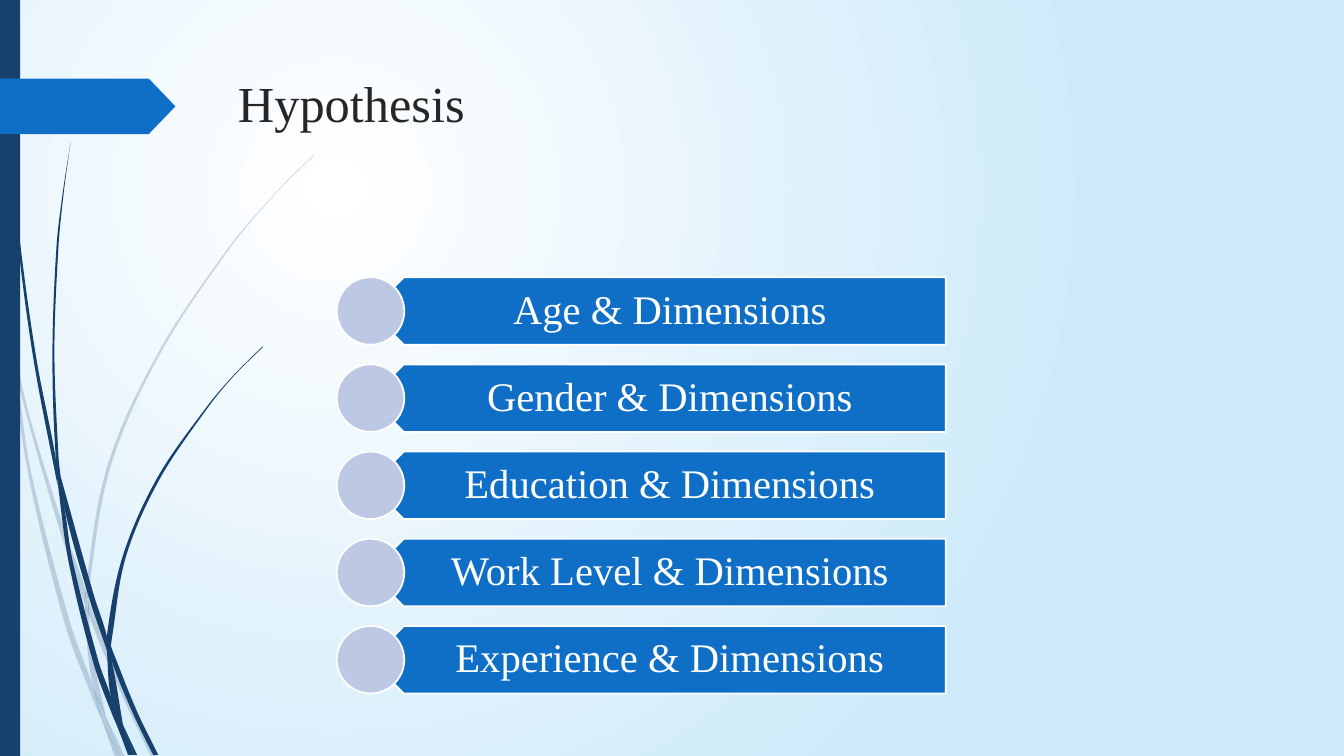
from dataclasses import dataclass

from lxml.etree import SubElement
from pptx import Presentation
from pptx.dml.color import RGBColor
from pptx.enum.shapes import MSO_SHAPE
from pptx.enum.text import MSO_ANCHOR, PP_ALIGN
from pptx.oxml.ns import qn
from pptx.util import Inches, Pt

TITLE = "Hypothesis"
HYPOTHESES = ["Age", "Gender", "Education", "Work Level", "Experience"]
ROW_TEXT = "{} & Dimensions"

# Each piece of grass: knots of its left edge, then of its right edge, downwards
PALE_GRASS = [
    ([(0, 2.99), (0.1, 3.44), (0.11, 3.5)], [(0, 2.82), (0.09, 3.22), (0.11, 3.5)]),
    ([(0.14, 3.45), (0.17, 3.76), (0.58, 5.22), (0.84, 5.99)],
     [(0.14, 3.45), (0.29, 4.12), (0.62, 5.2), (0.85, 5.86), (0.84, 5.99)]),
    ([(0.88, 5.96), (0.88, 6.1), (1.23, 6.94), (1.5, 7.51)],
     [(0.88, 5.96), (0.92, 6.07), (1.27, 6.92), (1.55, 7.51)]),
    ([(1.05, 7.11), (1.19, 7.51)], [(1.05, 7.11), (1.24, 7.51)]),
    ([(0.11, 3.5), (0.28, 4.7), (0.65, 6.21), (0.92, 6.93), (1.01, 7.14)],
     [(0.11, 3.5), (0.17, 3.76), (0.31, 4.69), (0.7, 6.19), (0.93, 6.83), (1.01, 7.14)]),
    ([(0.84, 5.99), (0.87, 6.46), (0.93, 6.83), (1.05, 7.11)],
     [(0.84, 5.99), (0.88, 6.1), (0.91, 6.46), (1.05, 7.11)]),
    ([(3.12, 1.53), (2.89, 1.75), (2.68, 1.97), (2.28, 2.44), (1.58, 3.48),
      (1.07, 4.61), (0.85, 5.84), (0.88, 5.96)],
     [(3.12, 1.54), (2.9, 1.75), (2.68, 1.98), (2.29, 2.45), (1.6, 3.49),
      (1.1, 4.62), (0.88, 5.84), (0.88, 5.96)]),
    ([(1.01, 7.14), (1.14, 7.51)], [(1.01, 7.14), (1.19, 7.51)]),
    ([(0.85, 5.86), (0.84, 5.99), (0.88, 6.1)], [(0.85, 5.86), (0.88, 5.96), (0.88, 6.1)]),
    ([(0.93, 6.83), (1.01, 7.14), (1.19, 7.51)], [(0.93, 6.83), (1.05, 7.11), (1.19, 7.51)]),
]
DARK_GRASS = [
    ([(0.03, 0), (0.07, 1.1), (0.17, 2.33), (0.33, 3.55), (0.57, 4.81)],
     [(0.04, 0), (0.08, 1.09), (0.19, 2.32), (0.36, 3.55), (0.55, 4.53), (0.57, 4.81)]),
    ([(0.6, 4.72), (0.64, 5.05), (0.88, 5.92), (1.06, 6.45)],
     [(0.6, 4.72), (0.93, 5.9), (1.06, 6.31), (1.06, 6.45)]),
    ([(1.1, 6.41), (1.11, 6.56), (1.32, 7.08), (1.52, 7.49)],
     [(1.1, 6.41), (1.13, 6.49), (1.36, 7.06), (1.57, 7.49)]),
    ([(0.57, 4.77), (0.68, 5.57), (0.93, 6.59), (1.11, 7.08), (1.17, 7.22)],
     [(0.57, 4.77), (0.64, 5.05), (0.72, 5.56), (0.98, 6.57), (1.1, 6.91), (1.17, 7.22)]),
    ([(0.7, 1.41), (0.62, 1.93), (0.56, 2.45), (0.52, 3.49), (0.55, 4.49), (0.6, 4.72)],
     [(0.7, 1.41), (0.63, 1.93), (0.58, 2.45), (0.54, 3.49), (0.58, 4.53), (0.6, 4.72)]),
    ([(1.22, 7.19), (1.33, 7.49)], [(1.22, 7.19), (1.36, 7.49)]),
    ([(0.55, 4.49), (0.57, 4.77), (0.64, 5.05)], [(0.55, 4.49), (0.6, 4.72), (0.64, 5.05)]),
    ([(2.6, 3.44), (2.31, 3.73), (2.04, 4.05), (1.56, 4.74), (1.22, 5.51),
      (1.06, 6.31), (1.1, 6.41)],
     [(2.61, 3.44), (2.31, 3.74), (2.05, 4.06), (1.58, 4.76), (1.25, 5.52),
      (1.11, 6.33), (1.1, 6.41)]),
    ([(1.17, 7.22), (1.27, 7.49)], [(1.17, 7.22), (1.31, 7.49)]),
    ([(1.06, 6.45), (1.1, 6.91), (1.22, 7.19)], [(1.06, 6.45), (1.11, 6.56), (1.22, 7.19)]),
    ([(1.06, 6.31), (1.06, 6.45), (1.11, 6.56)], [(1.06, 6.31), (1.1, 6.41), (1.11, 6.56)]),
    ([(1.1, 6.91), (1.17, 7.22), (1.3, 7.49)], [(1.1, 6.91), (1.22, 7.19), (1.33, 7.49)]),
]


@dataclass(frozen=True)
class Theme:
    navy: str = "17406D"
    blue: str = "0F6FC6"
    lilac: str = "BDC8E5"
    white: str = "FFFFFF"
    sky: str = "CEEAF9"
    ink: str = "262626"
    font: str = "Times New Roman"
    title_size: int = 36
    row_size: int = 29
    outline: float = 1.25
    pale_alpha: int = 20


THEME = Theme()
ROW_TOP, ROW_PITCH, ROW_HEIGHT = 2.75, 0.865, 0.67
DOT_LEFT, BAR_LEFT, BAR_WIDTH = 3.34, 3.67, 5.71
LABEL_LEFT, LABEL_WIDTH = 3.84, 5.55


def rgb(color):
    return RGBColor.from_string(color)


def paint(sp, fill, line=None):
    sp.shadow.inherit = False
    sp.fill.solid()
    sp.fill.fore_color.rgb = rgb(fill)
    if line:
        sp.line.color.rgb = rgb(line)
        sp.line.width = Pt(THEME.outline)
    else:
        sp.line.fill.background()


def add_preset(slide, kind, box, fill, line=None):
    sp = slide.shapes.add_shape(kind, *map(Inches, box))
    paint(sp, fill, line)
    return sp


def write(tf, text, size, color, align):
    p = tf.paragraphs[0]
    p.alignment = align
    r = p.add_run()
    r.text = text
    r.font.name = THEME.font
    r.font.size = Pt(size)
    r.font.color.rgb = rgb(color)
    return p


def curve_through(knots):
    """Return (control, control, end) triples of a smooth curve through the knots."""
    last = len(knots) - 1
    slopes = []
    for i in range(len(knots)):
        (x0, y0), (x1, y1) = knots[max(i - 1, 0)], knots[min(i + 1, last)]
        slopes.append((x1 - x0) / (y1 - y0))
    curves = []
    for i in range(last):
        (x0, y0), (x1, y1) = knots[i], knots[i + 1]
        h = (y1 - y0) / 3
        curves.append(((x0 + h * slopes[i], y0 + h),
                       (x1 - h * slopes[i + 1], y1 - h), (x1, y1)))
    return curves


def add_grass(slide, left, right, alpha=None):
    upward = right[::-1]
    outline = [(Inches(x), Inches(y)) for x, y in left + upward]
    builder = slide.shapes.build_freeform(*outline[0], scale=1)
    builder.add_line_segments(outline[1:], close=True)
    sp = builder.convert_to_shape()
    paint(sp, THEME.navy)

    contour = sp._element.find(".//" + qn("a:path"))
    for step in list(contour):
        contour.remove(step)

    def draw(tag, *points):
        step = SubElement(contour, qn(tag))
        for x, y in points:
            SubElement(step, qn("a:pt"), x=str(Inches(x) - sp.left),
                       y=str(Inches(y) - sp.top))

    draw("a:moveTo", left[0])
    for curve in curve_through(left):
        draw("a:cubicBezTo", *curve)
    if upward[0] != left[-1]:
        draw("a:lnTo", upward[0])
    for curve in curve_through(upward):
        draw("a:cubicBezTo", *curve)
    draw("a:close")
    if alpha:
        color = sp._element.spPr.find(qn("a:solidFill"))[0]
        SubElement(color, qn("a:alpha"), val=str(alpha * 1000))


def set_background(slide):
    fill = slide.background.fill
    fill.gradient()
    for stop, color in zip(fill.gradient_stops, (THEME.white, THEME.sky)):
        stop.color.rgb = rgb(color)
    grad = slide.background._cSld.find(".//" + qn("a:gradFill"))
    grad.remove(grad.find(qn("a:lin")))
    glow = SubElement(grad, qn("a:path"), path="circle")
    SubElement(glow, qn("a:fillToRect"), l="50000", t="50000", r="100000", b="100000")


def add_title(slide):
    title = slide.shapes.title
    title.left, title.top, title.width, title.height = map(
        Inches, (2.26, 0.67, 11.36, 1.45))
    tf = title.text_frame
    tf.vertical_anchor = MSO_ANCHOR.TOP
    write(tf, TITLE, THEME.title_size, THEME.ink, PP_ALIGN.LEFT)


def add_row(slide, top, text):
    bar = add_preset(slide, MSO_SHAPE.PENTAGON, (BAR_LEFT, top, BAR_WIDTH, ROW_HEIGHT),
                     THEME.blue, THEME.white)
    bar.rotation = 180
    label = slide.shapes.add_textbox(
        *map(Inches, (LABEL_LEFT, top, LABEL_WIDTH, ROW_HEIGHT)))
    tf = label.text_frame
    tf.word_wrap = True
    tf.vertical_anchor = MSO_ANCHOR.MIDDLE
    tf.margin_left, tf.margin_right = Inches(0.29), Inches(0.23)
    tf.margin_top = tf.margin_bottom = Inches(0.12)
    p = write(tf, text, THEME.row_size, THEME.white, PP_ALIGN.CENTER)
    p.line_spacing = 0.9
    add_preset(slide, MSO_SHAPE.OVAL, (DOT_LEFT, top, ROW_HEIGHT, ROW_HEIGHT),
               THEME.lilac, THEME.white)


prs = Presentation()
prs.slide_width, prs.slide_height = Inches(13.33), Inches(7.5)
slide = prs.slides.add_slide(prs.slide_layouts[5])
set_background(slide)
for grass, alpha in ((PALE_GRASS, THEME.pale_alpha), (DARK_GRASS, None)):
    for left, right in grass:
        add_grass(slide, left, right, alpha)
add_preset(slide, MSO_SHAPE.RECTANGLE, (0, 0, 0.2, 7.5), THEME.navy)
tag = add_preset(slide, MSO_SHAPE.PENTAGON, (0, 0.78, 1.74, 0.55), THEME.blue)
tag.adjustments[0] = 0.48
add_title(slide)
for i, name in enumerate(HYPOTHESES):
    add_row(slide, ROW_TOP + i * ROW_PITCH, ROW_TEXT.format(name))
prs.save("out.pptx")
